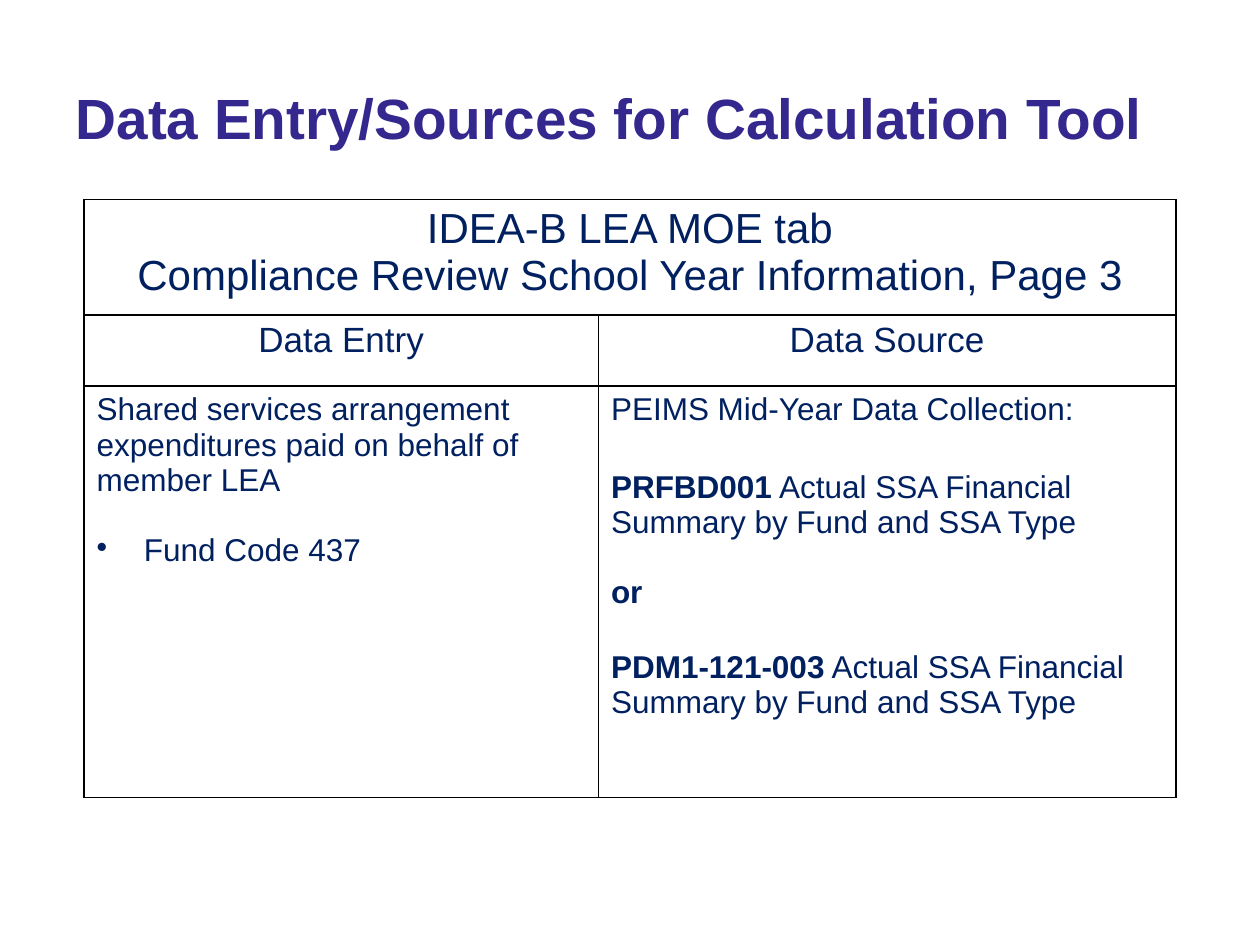
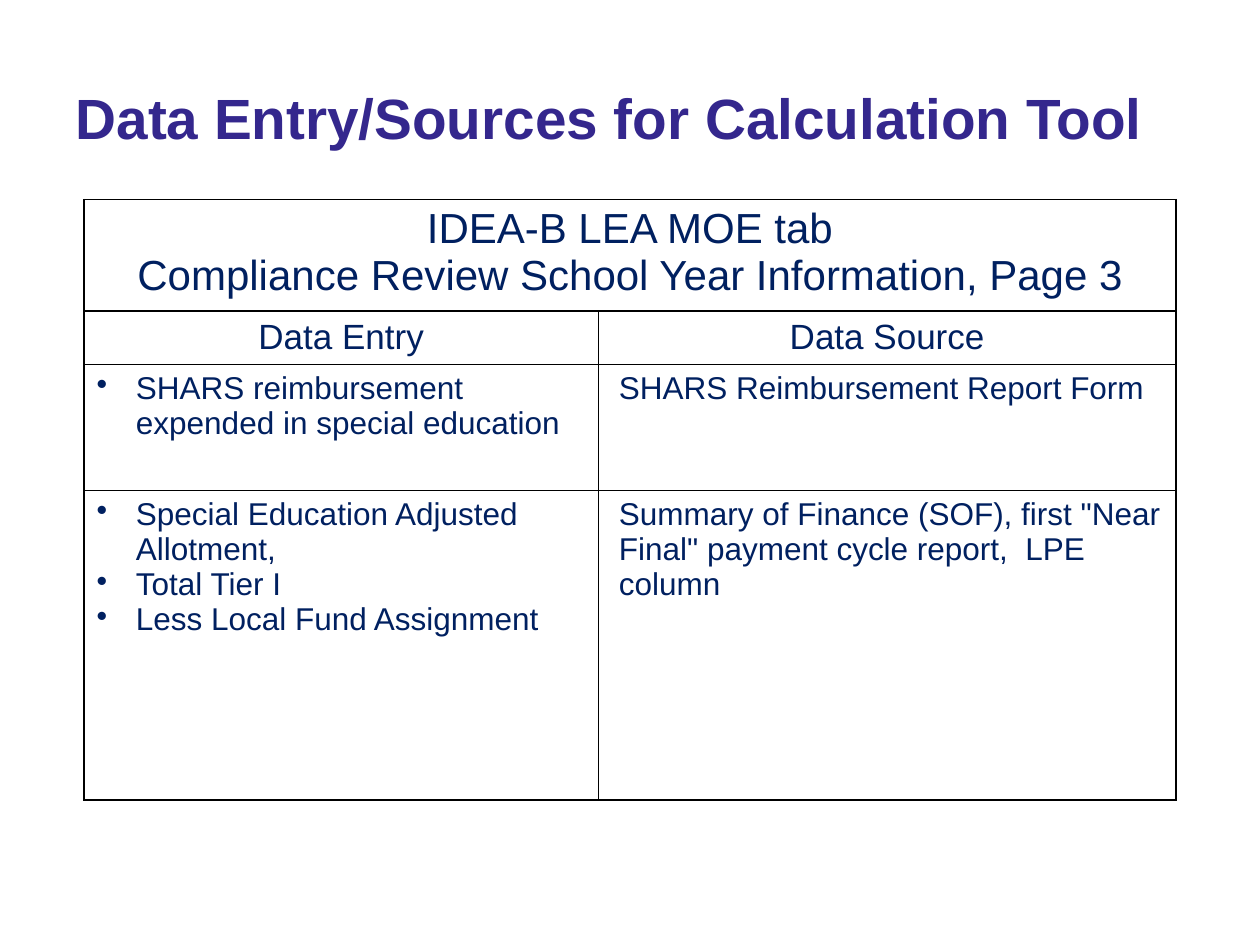
from dataclasses import dataclass

import pptx
import pptx.dml.color
import pptx.enum.text
import pptx.oxml
import pptx.oxml.ns
import pptx.util

Pt = pptx.util.Pt
Align = pptx.enum.text.PP_ALIGN
RGB = pptx.dml.color.RGBColor.from_string


@dataclass(frozen=True)
class Theme:
    font: str = "Arial"
    title_color: str = "34278D"
    text_color: str = "002060"
    border_color: str = "000000"
    border_width: float = 1
    title_size: float = 32.4
    heading_size: float = 24
    column_size: float = 20
    body_size: float = 18


@dataclass(frozen=True)
class Para:
    """One paragraph; an opening bold part may precede the text."""
    text: str
    lead: str = ""
    before: float = 0
    bullet: float = 0  # hanging indent in points, 0 for no bullet
    indent: float = 0


# Content shared by both slides
TITLE = "Data Entry/Sources for Calculation Tool"
HEADING = ["IDEA-B LEA MOE tab",
           "Compliance Review School Year Information, Page 3"]
COLUMN_NAMES = ["Data Entry", "Data Source"]
COLUMN_WIDTHS = [294, 330]
TABLE_LEFT, TABLE_TOP = 48, 114


class Deck:
    def __init__(self, theme):
        self.theme = theme
        self.prs = pptx.Presentation()
        self.prs.slide_width, self.prs.slide_height = Pt(720), Pt(540)
        self.slide = None

    def new_slide(self, title):
        self.slide = self.prs.slides.add_slide(self.prs.slide_layouts[5])
        box = self.slide.shapes.title
        box.left, box.top, box.width, box.height = Pt(36), Pt(21.6), Pt(648), Pt(90)
        frame = box.text_frame
        frame.text = title
        frame.word_wrap = True
        frame.auto_size = pptx.enum.text.MSO_AUTO_SIZE.NONE
        frame.vertical_anchor = pptx.enum.text.MSO_ANCHOR.MIDDLE
        paragraph = frame.paragraphs[0]
        paragraph.alignment = Align.LEFT
        self.style(paragraph.font, self.theme.title_size, self.theme.title_color, True)

    def style(self, font, size, color, bold=False):
        font.name, font.size, font.bold = self.theme.font, Pt(size), bold
        font.color.rgb = RGB(color)

    def borders(self, cell):
        theme = self.theme
        props = cell._tc.get_or_add_tcPr()
        for side in "LRTB":
            props.append(pptx.oxml.parse_xml(
                f'<a:ln{side} {pptx.oxml.ns.nsdecls("a")} w="{Pt(theme.border_width)}">'
                f'<a:solidFill><a:srgbClr val="{theme.border_color}"/></a:solidFill>'
                f'</a:ln{side}>'))

    def fill_cell(self, cell, paras, size, alignment=Align.LEFT):
        frame = cell.text_frame
        for index, para in enumerate(paras):
            paragraph = frame.add_paragraph() if index else frame.paragraphs[0]
            paragraph.alignment = alignment
            paragraph.space_before = Pt(para.before)
            props = paragraph._p.get_or_add_pPr()
            props.set("marL", str(Pt(para.bullet or para.indent)))
            props.set("indent", str(Pt(-para.bullet)))
            if para.bullet:
                props.append(pptx.oxml.parse_xml(
                    f'<a:buChar {pptx.oxml.ns.nsdecls("a")} char="•"/>'))
            self.style(paragraph.font, size, self.theme.text_color)
            if para.lead:
                lead = paragraph.add_run()
                lead.text, lead.font.bold = para.lead, True
            if para.text:
                paragraph.add_run().text = para.text

    def source_table(self, row_heights, body):
        """Heading row across, column names, then the rows of the body."""
        table = self.slide.shapes.add_table(
            len(row_heights), len(COLUMN_WIDTHS), Pt(TABLE_LEFT), Pt(TABLE_TOP),
            Pt(sum(COLUMN_WIDTHS)), Pt(sum(row_heights))).table
        table.first_row = table.horz_banding = False
        for column, width in zip(table.columns, COLUMN_WIDTHS):
            column.width = Pt(width)
        for row, height in zip(table.rows, row_heights):
            row.height = Pt(height)
        for cell in table.iter_cells():
            self.borders(cell)
            cell.fill.background()

        # Heading and column names
        heading = table.cell(0, 0)
        heading.merge(table.cell(0, 1))
        self.fill_cell(heading, map(Para, HEADING), self.theme.heading_size, Align.CENTER)
        for col, name in enumerate(COLUMN_NAMES):
            self.fill_cell(table.cell(1, col), [Para(name)],
                           self.theme.column_size, Align.CENTER)

        # Entries and their sources
        for row, cells in enumerate(body, start=2):
            for col, paras in enumerate(cells):
                self.fill_cell(table.cell(row, col), paras, self.theme.body_size)


def main():
    deck = Deck(Theme())

    # Shared services arrangement
    summary = " Actual SSA Financial Summary by Fund and SSA Type"
    deck.new_slide(TITLE)
    deck.source_table([66, 40.6, 235], [
        ([Para("Shared services arrangement expenditures paid on behalf of member LEA"),
          Para("Fund Code 437", before=20, bullet=27)],
         [Para("PEIMS Mid-Year Data Collection:"),
          Para(summary, lead="PRFBD001", before=24),
          Para("", lead="or", before=20),
          Para(summary, lead="PDM1-121-003", before=22.5)]),
    ])

    # Reimbursement and finance summary
    hanging, source_indent = 22.5, 4.5
    allotments = ["Special Education Adjusted Allotment,", "Total Tier I",
                  "Less Local Fund Assignment"]
    deck.new_slide(TITLE)
    deck.source_table([63.8, 30.4, 72, 177], [
        ([Para("SHARS reimbursement expended in special education", bullet=hanging)],
         [Para("SHARS Reimbursement Report Form", indent=source_indent)]),
        ([Para(item, bullet=hanging) for item in allotments],
         [Para('Summary of Finance (SOF), first "Near Final" payment cycle report,  LPE column',
               indent=source_indent)]),
    ])

    deck.prs.save("out.pptx")


if __name__ == "__main__":
    main()
